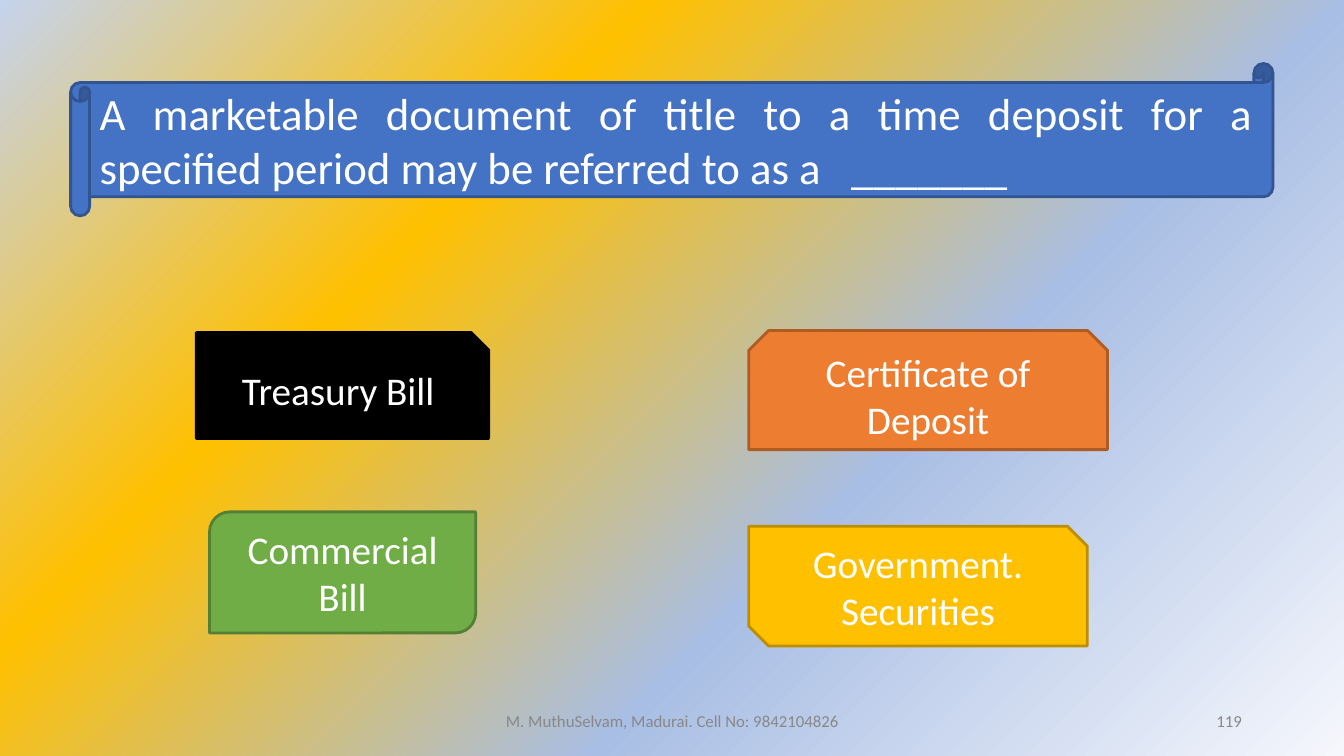
import pptx
import pptx.dml.color
import pptx.enum.shapes
import pptx.enum.text
import pptx.oxml
import pptx.oxml.ns
import pptx.util

Cm = pptx.util.Cm
Pt = pptx.util.Pt
RGB = pptx.dml.color.RGBColor
SHAPE = pptx.enum.shapes.MSO_SHAPE
ALIGN = pptx.enum.text.PP_ALIGN
MIDDLE = pptx.enum.text.MSO_ANCHOR.MIDDLE

WHITE = RGB(0xFF, 0xFF, 0xFF)
BLACK = RGB(0x00, 0x00, 0x00)
GREY = RGB(0x88, 0x88, 0x88)
BLUE, DARK_BLUE = RGB(0x44, 0x72, 0xC4), RGB(0x32, 0x54, 0x91)
ORANGE, DARK_ORANGE = RGB(0xED, 0x7D, 0x31), RGB(0xAF, 0x5C, 0x24)
GOLD, DARK_GOLD = RGB(0xFF, 0xC0, 0x00), RGB(0xBD, 0x8E, 0x00)
GREEN, DARK_GREEN = RGB(0x70, 0xAD, 0x47), RGB(0x53, 0x80, 0x35)
PALE_BLUE = RGB(0xC5, 0xD3, 0xED)
SOFT_BLUE = RGB(0xA9, 0xBE, 0xE4)
NEAR_WHITE = RGB(0xF5, 0xF7, 0xFC)

BACKGROUND = [(0, PALE_BLUE), (31, GOLD), (64, SOFT_BLUE), (100, NEAR_WHITE)]
OPTIONS = [
    ("Treasury Bill", SHAPE.SNIP_1_RECTANGLE, (4.95, 8.38, 7.37, 2.67), BLACK, BLACK),
    ("Certificate of Deposit", SHAPE.SNIP_2_SAME_RECTANGLE, (18.87, 8.33, 9.04, 3), ORANGE, DARK_ORANGE),
    ("Government. Securities", SHAPE.SNIP_2_DIAG_RECTANGLE, (18.87, 13.26, 8.53, 3.02), GOLD, DARK_GOLD),
    ("Commercial Bill", SHAPE.ROUND_2_DIAG_RECTANGLE, (5.28, 12.9, 6.71, 3.05), GREEN, DARK_GREEN),
]


class QuizSlide:
    font = "Calibri"

    def __init__(self, prs):
        self.slide = prs.slides.add_slide(prs.slide_layouts[6])

    def background(self, stops, angle):
        fill = self.slide.background.fill
        fill.gradient()
        fill.gradient_angle = angle
        gs_list = next(self.slide.element.iter(pptx.oxml.ns.qn("a:gsLst")))
        for gs in list(gs_list):
            gs_list.remove(gs)
        for percent, color in stops:
            gs_list.append(pptx.oxml.parse_xml(
                f'<a:gs {pptx.oxml.ns.nsdecls("a")} pos="{percent * 1000}">'
                f'<a:srgbClr val="{color}"/></a:gs>'))

    def set_text(self, sp, text, size, color, align):
        tf = sp.text_frame
        tf.word_wrap = True
        tf.vertical_anchor = MIDDLE
        p = tf.paragraphs[0]
        p.text = text
        p.alignment = align
        p.font.name = self.font
        p.font.size = Pt(size)
        p.font.color.rgb = color

    def panel(self, text, shape, box, fill, line, size=28, align=ALIGN.CENTER):
        sp = self.slide.shapes.add_shape(shape, *map(Cm, box))
        sp.shadow.inherit = False
        sp.fill.solid()
        sp.fill.fore_color.rgb = fill
        sp.line.color.rgb = line
        sp.line.width = Pt(2)
        self.set_text(sp, text, size, WHITE, align)

    def footer(self, text, box, align):
        sp = self.slide.shapes.add_textbox(*map(Cm, box))
        self.set_text(sp, text, 12, GREY, align)


def main():
    prs = pptx.Presentation()
    prs.slide_width, prs.slide_height = Cm(33.87), Cm(19.05)
    s = QuizSlide(prs)
    s.background(BACKGROUND, 315)
    s.panel("A marketable document of title to a time deposit for a specified period "
            "may be referred to as a   _______",
            SHAPE.HORIZONTAL_SCROLL, (1.78, 1.6, 30.3, 3.84), BLUE, DARK_BLUE,
            size=32, align=ALIGN.JUSTIFY)
    for option in OPTIONS:
        s.panel(*option)
    s.footer("M. MuthuSelvam, Madurai. Cell No: 9842104826", (11.23, 17.65, 11.43, 1.02), ALIGN.CENTER)
    s.footer("119", (23.93, 17.65, 7.62, 1.02), ALIGN.RIGHT)
    prs.save("out.pptx")


if __name__ == "__main__":
    main()
